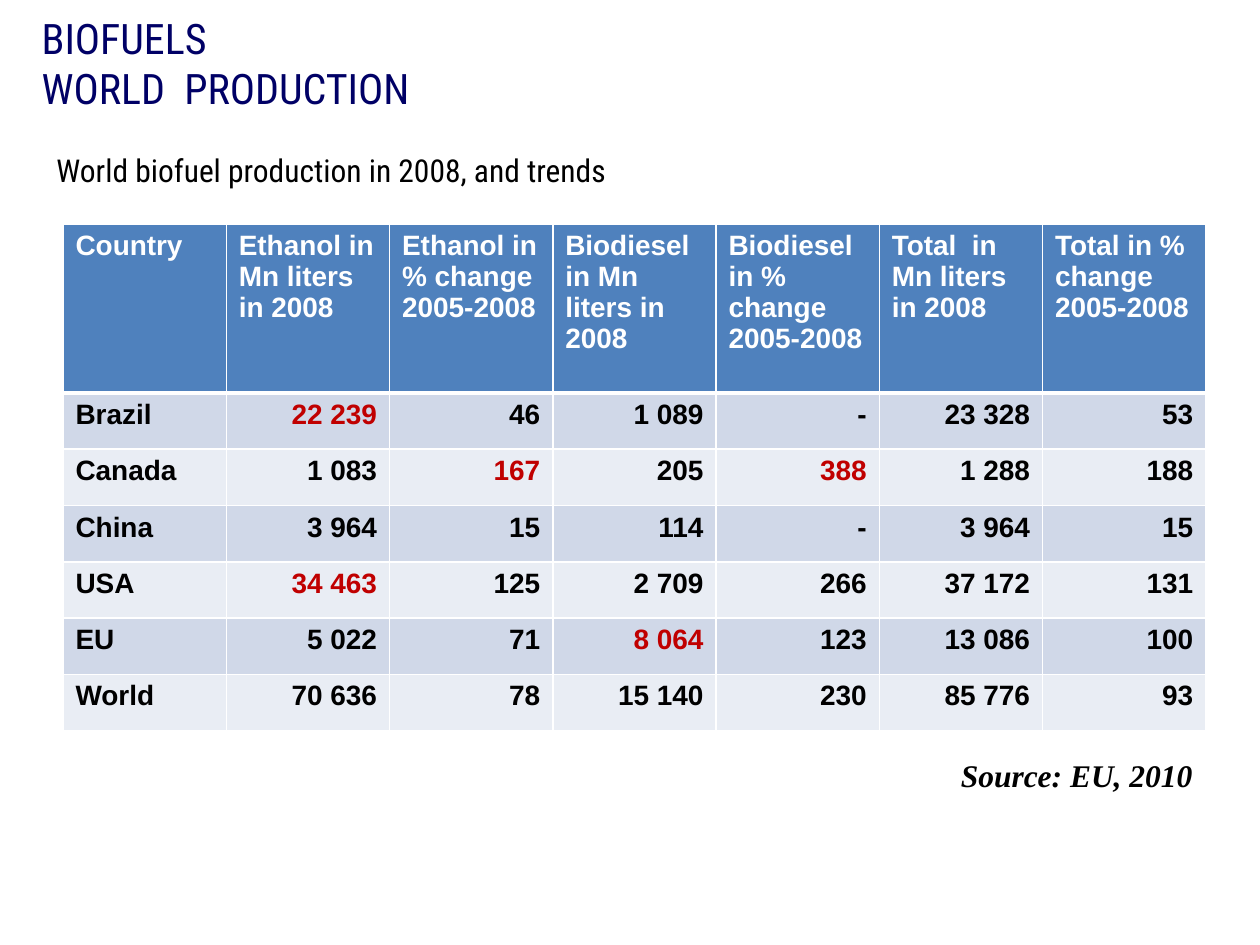
from dataclasses import dataclass

from lxml import etree
from pptx import Presentation
from pptx import util as u
from pptx.dml.color import RGBColor
from pptx.enum import text
from pptx.oxml.ns import qn

PX = 914400 // 126
LEFT, RIGHT = text.PP_ALIGN.LEFT, text.PP_ALIGN.RIGHT


@dataclass(frozen=True)
class Theme:
    navy: str = "000066"
    black: str = "000000"
    white: str = "FFFFFF"
    red: str = "C00000"
    header: str = "4F81BD"
    bands: tuple = ("D0D8E8", "E9EDF4")
    display: str = "Roboto Condensed"
    body: str = "Arial"
    serif: str = "Times New Roman"
    title_size: int = 24
    note_size: int = 18
    cell_size: int = 16


THEME = Theme()

HEADINGS = [
    "Country",
    "Ethanol in Mn liters in 2008",
    "Ethanol in % change 2005-2008",
    "Biodiesel in Mn liters in 2008",
    "Biodiesel in % change 2005-2008",
    "Total  in Mn liters in 2008",
    "Total in % change 2005-2008",
]
PRODUCTION = [
    ["Brazil", "22 239", "46", "1 089", "-", "23 328", "53"],
    ["Canada", "1 083", "167", "205", "388", "1 288", "188"],
    ["China", "3 964", "15", "114", "-", "3 964", "15"],
    ["USA", "34 463", "125", "2 709", "266", "37 172", "131"],
    ["EU", "5 022", "71", "8 064", "123", "13 086", "100"],
    ["World", "70 636", "78", "15 140", "230", "85 776", "93"],
]
HIGHLIGHTS = {"22 239", "167", "388", "34 463", "8 064"}


def px(*lengths):
    return [u.Emu(length * PX) for length in lengths]


def style_text(frame, font, size, color, align=LEFT, bold=False, italic=False):
    for paragraph in frame.paragraphs:
        paragraph.alignment = align
        for run in paragraph.runs:
            run.font.name = font
            run.font.size = u.Pt(size)
            run.font.bold = bold
            run.font.italic = italic
            run.font.color.rgb = RGBColor.from_string(color)


def fit_frame(frame):
    frame.word_wrap = True
    frame.auto_size = text.MSO_AUTO_SIZE.SHAPE_TO_FIT_TEXT
    frame.vertical_anchor = text.MSO_ANCHOR.TOP


def set_title(slide, words, box):
    title = slide.shapes.title
    title.left, title.top, title.width, title.height = px(*box)
    title.text_frame.text = words
    fit_frame(title.text_frame)
    style_text(title.text_frame, THEME.display, THEME.title_size, THEME.navy)


def add_note(slide, words, box, font, **style):
    frame = slide.shapes.add_textbox(*px(*box)).text_frame
    frame.text = words
    fit_frame(frame)
    style_text(frame, font, THEME.note_size, THEME.black, **style)


def set_borders(cell, **widths):
    properties = cell._tc.get_or_add_tcPr()
    for side, points in widths.items():
        line = etree.SubElement(properties, qn(f"a:ln{side}"), w=str(u.Pt(points)))
        fill = etree.SubElement(line, qn("a:solidFill"))
        etree.SubElement(fill, qn("a:srgbClr"), val=THEME.white)


def fill_cell(cell, words, row, column):
    # The rule under the header is heavier than the others
    set_borders(cell, L=1, R=1, T=3 if row == 1 else 1, B=3 if row == 0 else 1)
    cell.fill.solid()
    if row == 0:
        background, color = THEME.header, THEME.white
    else:
        background = THEME.bands[(row - 1) % 2]
        color = THEME.red if words in HIGHLIGHTS else THEME.black
    cell.fill.fore_color.rgb = RGBColor.from_string(background)
    cell.text_frame.text = words
    align = RIGHT if row and column else LEFT
    style_text(cell.text_frame, THEME.body, THEME.cell_size, color, align, bold=True)


def add_production_table(slide, box, header_height):
    rows = [HEADINGS, *PRODUCTION]
    left, top, width, height = px(*box)
    table = slide.shapes.add_table(
        len(rows), len(HEADINGS), left, top, width, height).table
    for column in table.columns:
        column.width = u.Emu(width // len(HEADINGS))
    header, = px(header_height)
    for index, row in enumerate(table.rows):
        row.height = u.Emu((height - header) // len(PRODUCTION)) if index else header
    for r, values in enumerate(rows):
        for c, words in enumerate(values):
            fill_cell(table.cell(r, c), words, r, c)


def main():
    deck = Presentation()
    deck.slide_width, deck.slide_height = px(1260, 945)
    slide = deck.slides.add_slide(deck.slide_layouts[5])

    # Heading and subtitle
    set_title(slide, "BIOFUELS\nWORLD  PRODUCTION", (29, 6, 1206, 115))
    add_note(slide, "World biofuel production in 2008, and trends",
             (44, 145, 1191, 51), THEME.display)

    # Production figures by country
    add_production_table(slide, (63, 224, 1143, 507), header_height=169)

    # Source line
    add_note(slide, "Source: EU, 2010", (203, 750, 1002, 51), THEME.serif,
             align=RIGHT, bold=True, italic=True)

    deck.save("out.pptx")


if __name__ == "__main__":
    main()
